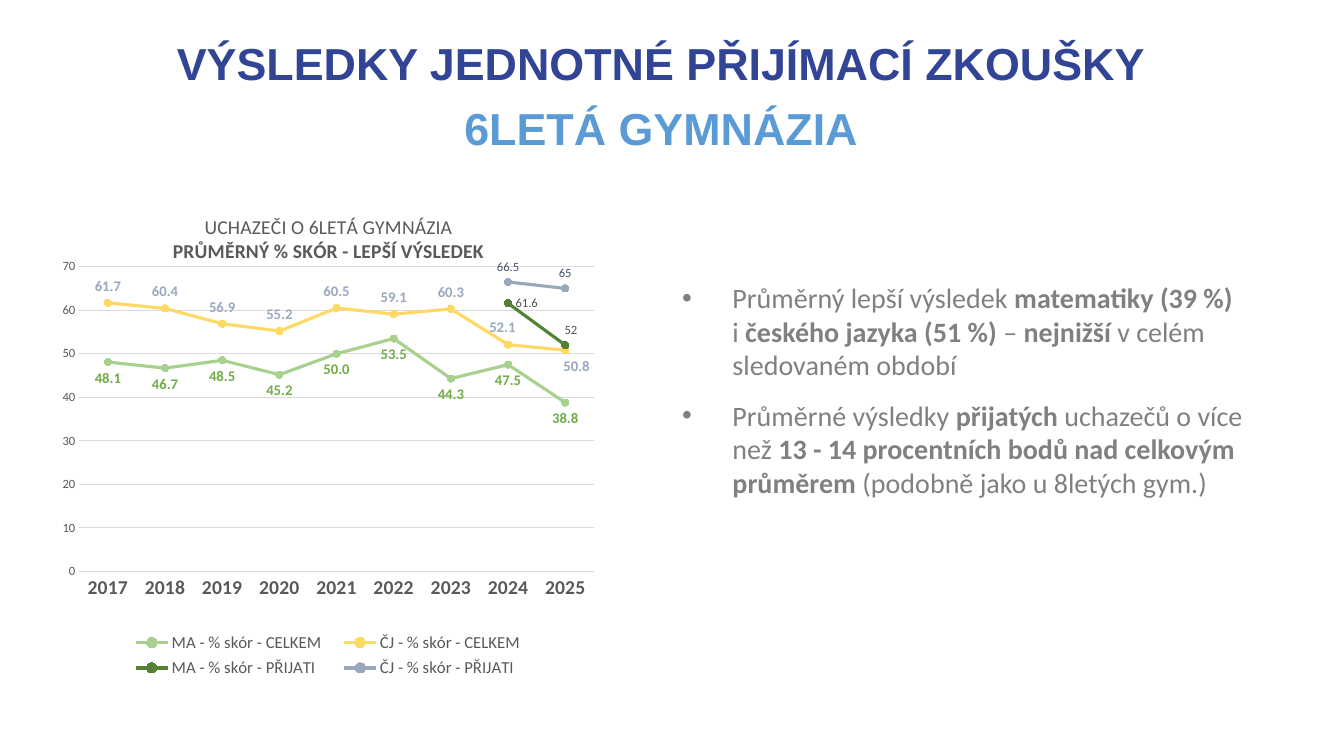
from dataclasses import dataclass

from lxml.etree import SubElement
from pptx import Presentation
from pptx.chart.data import CategoryChartData
from pptx.dml.color import RGBColor
from pptx.enum.chart import (XL_CHART_TYPE, XL_LABEL_POSITION, XL_LEGEND_POSITION,
                             XL_MARKER_STYLE, XL_TICK_MARK)
from pptx.enum.text import MSO_ANCHOR, MSO_AUTO_SIZE, PP_ALIGN
from pptx.oxml.ns import qn
from pptx.util import Inches, Pt

COLUMNS, ROWS = 40, 22.5


@dataclass(frozen=True)
class Theme:
    heading_font: str = "Arial"
    body_font: str = "Calibri"
    navy: str = "324496"
    blue: str = "5B9BD5"
    body: str = "808080"
    chart_text: str = "595959"
    rule: str = "D9D9D9"
    mint: str = "A9D18E"
    yellow: str = "FFD966"
    green: str = "548235"
    steel: str = "99A8BD"
    leaf_label: str = "70AD47"
    dark_label: str = "525252"
    slate_label: str = "44546A"
    heading_size: float = 32
    body_size: float = 20
    chart_title_size: float = 14
    legend_size: float = 12
    total_label_size: float = 10.5
    small_size: float = 9


THEME = Theme()
BELOW, ABOVE, RIGHT = XL_LABEL_POSITION.BELOW, XL_LABEL_POSITION.ABOVE, XL_LABEL_POSITION.RIGHT

HEADING = [("VÝSLEDKY JEDNOTNÉ PŘIJÍMACÍ ZKOUŠKY", THEME.navy), ("6LETÁ GYMNÁZIA", THEME.blue)]
FINDINGS = [
    [("Průměrný lepší výsledek ", False), ("matematiky (39 %) ", True), ("i", False),
     (" českého jazyka (51 %) ", True), ("– ", False), ("nejnižší", True),
     (" v celém sledovaném období", False)],
    [("Průměrné výsledky ", False), ("přijatých", True), (" uchazečů o více než ", False),
     ("13 - 14 procentních bodů nad celkovým průměrem ", True),
     ("(podobně jako u 8letých gym.)", False)],
]
CHART_TITLE = [("UCHAZEČI O 6LETÁ GYMNÁZIA", False), ("PRŮMĚRNÝ % SKÓR - LEPŠÍ VÝSLEDEK", True)]
YEARS = [str(year) for year in range(2017, 2026)]


@dataclass(frozen=True)
class ScoreLine:
    name: str
    scores: tuple
    color: str
    label_color: str
    position: XL_LABEL_POSITION
    total: bool
    moved_labels: tuple = ()


SCORE_LINES = [
    ScoreLine("MA - % skór - CELKEM", (48.1, 46.7, 48.5, 45.2, 50, 53.5, 44.3, 47.5, 38.8),
              THEME.mint, THEME.leaf_label, BELOW, True),
    ScoreLine("ČJ - % skór - CELKEM", (61.7, 60.4, 56.9, 55.2, 60.5, 59.1, 60.3, 52.1, 50.8),
              THEME.yellow, THEME.steel, ABOVE, True, ((7, ABOVE, -0.01), (8, BELOW, 0.02))),
    ScoreLine("MA - % skór - PŘIJATI", (None,) * 7 + (61.6, 52),
              THEME.green, THEME.dark_label, RIGHT, False, ((8, ABOVE, 0.01),)),
    ScoreLine("ČJ - % skór - PŘIJATI", (None,) * 7 + (66.5, 65),
              THEME.steel, THEME.slate_label, ABOVE, False),
]


def cells(deck, left, top, width, height):
    across, down = deck.slide_width / COLUMNS, deck.slide_height / ROWS
    return int(left * across), int(top * down), int(width * across), int(height * down)


def place(shape, area):
    shape.left, shape.top, shape.width, shape.height = area


def style(font, size, color, bold=None, name=THEME.body_font):
    font.name, font.size, font.bold = name, Pt(size), bold
    font.color.rgb = RGBColor.from_string(color)


def paragraphs(frame, count):
    return [frame.paragraphs[0]] + [frame.add_paragraph() for _ in range(count - 1)]


def write_heading(box, area):
    place(box, area)
    frame = box.text_frame
    frame.vertical_anchor = MSO_ANCHOR.TOP
    frame.auto_size = MSO_AUTO_SIZE.NONE
    for para, (words, color) in zip(paragraphs(frame, len(HEADING)), HEADING):
        para.text = words
        para.alignment = PP_ALIGN.CENTER
        para.line_spacing = 1.05
        para.space_before, para.space_after = Pt(0), Pt(6)
        style(para.font, THEME.heading_size, color, True, THEME.heading_font)


def write_findings(box, area):
    place(box, area)
    frame = box.text_frame
    frame.auto_size = MSO_AUTO_SIZE.SHAPE_TO_FIT_TEXT
    for index, (para, spans) in enumerate(zip(paragraphs(frame, len(FINDINGS)), FINDINGS)):
        para.space_before = Pt(12 if index else 0)
        properties = para._p.get_or_add_pPr()
        properties.set("marL", str(Inches(0.5)))
        properties.set("indent", str(-Inches(0.5)))
        SubElement(properties, qn("a:buChar")).set("char", "•")
        style(para.font, THEME.body_size, THEME.body)
        for words, bold in spans:
            span = para.add_run()
            span.text, span.font.bold = words, bold


def set_layout(parent, after, **values):
    for old in parent.findall(qn("c:layout")):
        parent.remove(old)
    layout = SubElement(parent, qn("c:layout"))
    manual = SubElement(layout, qn("c:manualLayout"))
    for tag, value in values.items():
        SubElement(manual, qn(f"c:{tag}")).set("val", str(value))
    if after is None:
        parent.insert(0, layout)
    else:
        parent.find(qn(after)).addnext(layout)


def format_chart_title(chart):
    title = chart.chart_title
    for para, (words, bold) in zip(paragraphs(title.text_frame, len(CHART_TITLE)), CHART_TITLE):
        para.text = words
        style(para.font, THEME.chart_title_size, THEME.chart_text, bold)
    set_layout(title._element, "c:tx", xMode="edge", yMode="edge", x=0.22, y=0.04)


def format_axes(chart):
    years, scores = chart.category_axis, chart.value_axis
    style(years.tick_labels.font, THEME.chart_title_size, THEME.chart_text, True)
    style(scores.tick_labels.font, THEME.small_size, THEME.chart_text, False)
    scores.tick_labels.number_format = "0"
    scores.tick_labels.number_format_is_linked = False
    scores.minimum_scale, scores.maximum_scale, scores.major_unit = 0, 70, 10
    scores.format.line.fill.background()
    for axis in (years, scores):
        axis.major_tick_mark = axis.minor_tick_mark = XL_TICK_MARK.NONE
    for line in (years.format.line, scores.major_gridlines.format.line):
        line.color.rgb = RGBColor.from_string(THEME.rule)
        line.width = Pt(0.75)


def format_series(series, score_line):
    color = RGBColor.from_string(score_line.color)
    series.smooth = False
    series.format.line.color.rgb = color
    series.format.line.width = Pt(2.25)
    series.marker.style, series.marker.size = XL_MARKER_STYLE.CIRCLE, 5
    series.marker.format.fill.solid()
    series.marker.format.fill.fore_color.rgb = color
    series.marker.format.line.color.rgb = color
    size = THEME.total_label_size if score_line.total else THEME.small_size
    labels = series.data_labels
    labels.show_value = True
    labels.position = score_line.position
    labels.number_format = "#,##0.0" if score_line.total else "General"
    labels.number_format_is_linked = False
    style(labels.font, size, score_line.label_color, score_line.total)
    for index, position, shift in score_line.moved_labels:
        label = series.points[index].data_label
        style(label.font, size, score_line.label_color, score_line.total)
        label.position = position
        set_layout(label._dLbl, "c:idx", x=shift, y=0)


def add_score_chart(page, area):
    scores = CategoryChartData()
    scores.categories = YEARS
    for score_line in SCORE_LINES:
        scores.add_series(score_line.name, score_line.scores)
    chart = page.shapes.add_chart(XL_CHART_TYPE.LINE_MARKERS, *area, scores).chart
    style(chart.font, 10, THEME.chart_text)
    format_chart_title(chart)
    format_axes(chart)
    plot = chart.plots[0]
    plot.vary_by_categories = False
    for series, score_line in zip(plot.series, SCORE_LINES):
        format_series(series, score_line)
    chart.has_legend = True
    chart.legend.position = XL_LEGEND_POSITION.BOTTOM
    chart.legend.include_in_layout = False
    style(chart.legend.font, THEME.legend_size, THEME.chart_text)
    set_layout(chart.legend._element, "c:legendPos", xMode="edge", yMode="edge",
               x=0.13, y=0.86, w=0.74, h=0.11)
    set_layout(chart._chartSpace.chart.plotArea, None, layoutTarget="inner", xMode="edge",
               yMode="edge", x=0.06, y=0.15, w=0.91, h=0.6)


def main():
    deck = Presentation()
    deck.slide_width, deck.slide_height = Inches(13.33), Inches(7.5)
    page = deck.slides.add_slide(deck.slide_layouts[1])
    write_heading(page.shapes.title, cells(deck, 0.93, 0.84, 37.5, 5.9))
    write_findings(page.placeholders[1], cells(deck, 20, 8.2, 17.35, 6.87))
    add_score_chart(page, cells(deck, 1.35, 5.67, 16.83, 15.12))
    deck.save("out.pptx")


if __name__ == "__main__":
    main()
